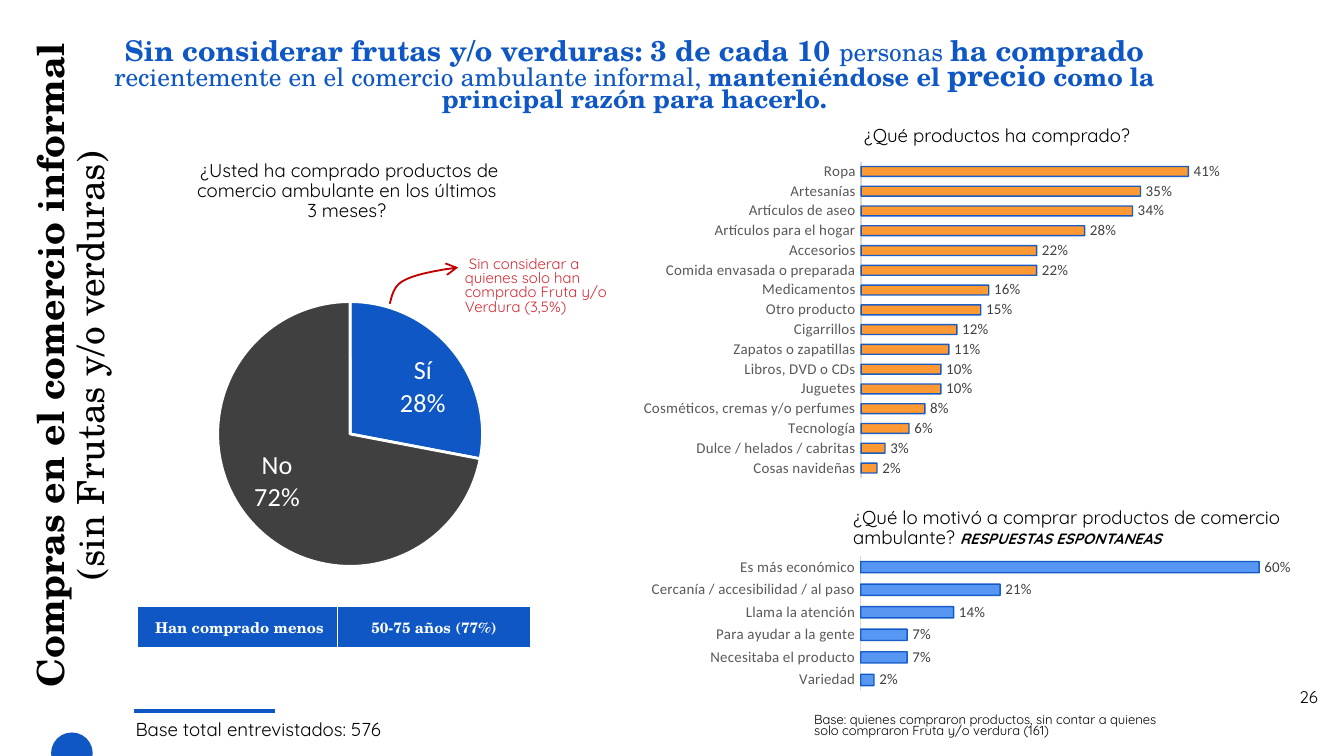
from dataclasses import dataclass

from lxml.etree import SubElement
from pptx import Presentation
from pptx.chart.data import CategoryChartData
from pptx.dml.color import RGBColor
from pptx.enum.chart import XL_CHART_TYPE, XL_LABEL_POSITION, XL_TICK_MARK
from pptx.enum.shapes import MSO_CONNECTOR, MSO_SHAPE
from pptx.enum.text import MSO_ANCHOR, PP_ALIGN
from pptx.oxml import parse_xml
from pptx.oxml.ns import nsdecls, qn
from pptx.util import Inches, Pt


@dataclass(frozen=True)
class Theme:
    blue: str = "0E57C4"
    light_blue: str = "5796F3"
    orange: str = "FF9933"
    dark: str = "404040"
    gray: str = "595959"
    axis: str = "D9D9D9"
    red: str = "D62933"
    arrow: str = "C00000"
    black: str = "000000"
    white: str = "FFFFFF"
    serif: str = "TeX Gyre Schola"
    sans: str = "Quicksand"
    chart: str = "Calibri"
    title: float = 20
    strong: float = 15.3
    key: float = 16.1
    lead: float = 13.6
    pie: float = 14
    body: float = 10
    page: float = 9
    small: float = 8
    note: float = 7


T = Theme()
LEFT, CENTER = PP_ALIGN.LEFT, PP_ALIGN.CENTER
TOP, MIDDLE = MSO_ANCHOR.TOP, MSO_ANCHOR.MIDDLE

# Runs: (text, size, bold, italic)
TITLE = [("Compras en el comercio informal ", T.title, True, False),
         ("(sin Frutas y/o verduras)", T.title, False, False)]
HEADLINE = [
    ("Sin considerar frutas y/o verduras: 3 de cada 10 ", T.strong, True, False),
    ("personas ", T.lead, False, False),
    ("ha comprado ", T.strong, True, False),
    ("recientemente en el comercio ambulante informal,", T.lead, False, False),
    (" manteniéndose el ", T.lead, True, False),
    ("precio", T.key, True, False),
    (" como la principal razón para hacerlo.", T.lead, True, False),
]
REASON_QUESTION = [
    ("¿Qué lo motivó a comprar productos de comercio ambulante? ", T.body, False, False),
    ("RESPUESTAS ESPONTANEAS", T.small, True, True),
]

# Plain texts: (box, text, size, colour, alignment, line spacing)
TEXTS = [
    ((0.91, 5.31, 2.32, 0.27), "Base total entrevistados: 576", T.body, T.black, LEFT, 0.9),
    ((9.57, 5.06, 0.36, 0.35), "26", T.page, T.black, LEFT, 1.0),
    ((6.33, 0.89, 2.93, 0.45), "¿Qué productos ha comprado?", T.body, T.black, LEFT, 0.9),
    ((1.33, 1.15, 2.5, 0.56), " ¿Usted ha comprado productos de comercio ambulante "
     "en los últimos 3 meses?", T.body, T.black, CENTER, 0.9),
    ((5.96, 5.28, 2.81, 0.27), "Base: quienes compraron productos, sin contar a quienes "
     "solo compraron Fruta y/o verdura (161)", T.note, T.black, LEFT, 0.7),
    ((3.36, 1.87, 1.41, 0.56), " Sin considerar a quienes solo han comprado Fruta y/o "
     "Verdura (3,5%)", T.small, T.red, LEFT, 0.8),
]

ANSWERS = [("Sí", 28, T.blue), ("No", 72, T.dark)]
PRODUCTS = [
    ("Ropa", 0.41), ("Artesanías", 0.35), ("Artículos de aseo", 0.34),
    ("Artículos para el hogar", 0.28), ("Accesorios", 0.22),
    ("Comida envasada o preparada", 0.22), ("Medicamentos", 0.16),
    ("Otro producto", 0.15), ("Cigarrillos", 0.12), ("Zapatos o zapatillas", 0.11),
    ("Libros, DVD o CDs", 0.10), ("Juguetes", 0.10),
    ("Cosméticos, cremas y/o perfumes", 0.08), ("Tecnología", 0.06),
    ("Dulce / helados / cabritas", 0.03), ("Cosas navideñas", 0.02),
]
REASONS = [
    ("Es más económico", 0.60), ("Cercanía / accesibilidad / al paso", 0.21),
    ("Llama la atención", 0.14), ("Para ayudar a la gente", 0.07),
    ("Necesitaba el producto", 0.07), ("Variedad", 0.02),
]
PROFILE = [("Han comprado menos", 1.49, PP_ALIGN.RIGHT), ("50-75 años (77%)", 1.44, CENTER)]
ARROW_CURVES = [
    [(2.9, 2.26), (2.92, 2.19), (2.93, 2.12), (3.02, 2.08)],
    [(3.02, 2.08), (3.1, 2.04), (3.26, 2.01), (3.41, 1.99)],
]


def rgb(value):
    return RGBColor.from_string(value)


def box(sizes):
    return [Inches(v) for v in sizes]


def style(font, size, color, name, bold=False, italic=False):
    font.size, font.name, font.bold, font.italic = Pt(size), name, bold, italic
    font.color.rgb = rgb(color)


def stroke(line, color, width):
    line.color.rgb = rgb(color)
    line.width = Pt(width)


def add_text(s, at, runs, color, name, align=LEFT, spacing=1.0, anchor=TOP):
    sp = s.shapes.add_textbox(*box(at))
    tf = sp.text_frame
    tf.word_wrap, tf.vertical_anchor = True, anchor
    p = tf.paragraphs[0]
    p.alignment, p.line_spacing = align, spacing
    for text, size, bold, italic in runs:
        r = p.add_run()
        r.text = text
        style(r.font, size, color, name, bold, italic)
    return sp


def add_chart(s, kind, at, rows, plot_area):
    """Add a one-series chart; plot_area holds the inner plot's x, y, w, h as fractions."""
    data = CategoryChartData(number_format="0%")
    data.categories = [row[0] for row in rows]
    data.add_series("Series 1", [row[1] for row in rows])
    chart = s.shapes.add_chart(kind, *box(at), data).chart
    chart.has_title = chart.has_legend = False
    style(chart.font, T.body, T.black, T.chart)
    area = chart._chartSpace.chart.plotArea
    for old in area.findall(qn("c:layout")):
        area.remove(old)
    parts = [("layoutTarget", "inner"), ("xMode", "edge"), ("yMode", "edge"),
             *zip("xywh", plot_area)]
    inner = "".join(f'<c:{tag} val="{val}"/>' for tag, val in parts)
    area.insert(0, parse_xml(f'<c:layout {nsdecls("c")}><c:manualLayout>{inner}'
                             '</c:manualLayout></c:layout>'))
    plot = chart.plots[0]
    plot.has_data_labels = True
    plot.data_labels.number_format = "0%"
    plot.data_labels.number_format_is_linked = False
    return chart, plot


def add_pie(s, at, rows, plot_area):
    _, plot = add_chart(s, XL_CHART_TYPE.PIE, at, rows, plot_area)
    for i, (_, _, color) in enumerate(rows):
        fmt = plot.series[0].points[i].format
        fmt.fill.solid()
        fmt.fill.fore_color.rgb = rgb(color)
        stroke(fmt.line, T.white, 1.5)
    labels = plot.data_labels
    style(labels.font, T.pie, T.white, T.chart)
    labels.show_value = False
    labels.show_percentage = labels.show_category_name = True
    labels.position = XL_LABEL_POSITION.INSIDE_END


def add_bars(s, at, rows, plot_area, color, maximum):
    chart, plot = add_chart(s, XL_CHART_TYPE.BAR_CLUSTERED, at, rows, plot_area)
    plot.gap_width, plot.vary_by_categories = 100, False
    fmt = plot.series[0].format
    fmt.fill.solid()
    fmt.fill.fore_color.rgb = rgb(color)
    stroke(fmt.line, T.blue, 0.75)
    edge = fmt.line._get_or_add_ln().find(f".//{qn('a:srgbClr')}")
    SubElement(edge, qn("a:alpha"), val="95000")
    plot.data_labels.show_value = True
    plot.data_labels.position = XL_LABEL_POSITION.OUTSIDE_END
    style(plot.data_labels.font, T.small, T.dark, T.chart)
    cat, val = chart.category_axis, chart.value_axis
    cat.reverse_order = True
    cat.major_tick_mark = cat.minor_tick_mark = XL_TICK_MARK.NONE
    style(cat.tick_labels.font, T.small, T.gray, T.chart)
    stroke(cat.format.line, T.axis, 0.75)
    val.minimum_scale, val.maximum_scale = 0, maximum
    val.has_major_gridlines = val.visible = False


def add_profile(s, left, top, height):
    width = sum(w for _, w, _ in PROFILE)
    table = s.shapes.add_table(1, len(PROFILE), *box((left, top, width, height))).table
    for i, (text, w, align) in enumerate(PROFILE):
        table.columns[i].width = Inches(w)
        cell = table.cell(0, i)
        cell.vertical_anchor = MIDDLE
        p = cell.text_frame.paragraphs[0]
        p.alignment = align
        r = p.add_run()
        r.text = text
        style(r.font, T.small, T.white, T.serif, bold=True)
        tc_pr = cell._tc.get_or_add_tcPr()
        for side, pts in zip("LRTB", (1, 1, 1, 3)):
            ln = SubElement(tc_pr, qn(f"a:ln{side}"), w=str(Pt(pts)))
            SubElement(SubElement(ln, qn("a:solidFill")), qn("a:srgbClr"), val=T.white)
        cell.fill.solid()
        cell.fill.fore_color.rgb = rgb(T.blue)


def bezier(points, t):
    weights = ((1 - t) ** 3, 3 * t * (1 - t) ** 2, 3 * t * t * (1 - t), t ** 3)
    return tuple(Inches(sum(w * v for w, v in zip(weights, axis))) for axis in zip(*points))


def add_curved_arrow(s, curves, steps=12):
    builder = s.shapes.build_freeform(*bezier(curves[0], 0))
    builder.add_line_segments([bezier(c, i / steps) for c in curves
                               for i in range(1, steps + 1)], close=False)
    sp = builder.convert_to_shape()
    sp.shadow.inherit = False
    sp.fill.background()
    stroke(sp.line, T.arrow, 1)
    SubElement(sp.line._get_or_add_ln(), qn("a:tailEnd"), type="arrow")


def main():
    prs = Presentation()
    prs.slide_width = Inches(10)
    prs.slide_height = prs.slide_width * 9 // 16
    s = prs.slides.add_slide(prs.slide_layouts[6])

    dot = s.shapes.add_shape(MSO_SHAPE.OVAL, *box((0.38, 5.45, 0.31, 0.31)))
    dot.shadow.inherit = False
    dot.fill.solid()
    dot.fill.fore_color.rgb = rgb(T.blue)
    dot.line.fill.background()
    rule = s.shapes.add_connector(MSO_CONNECTOR.STRAIGHT, *box((1, 5.29, 2.05, 5.29)))
    stroke(rule.line, T.blue, 1.75)
    SubElement(rule._element.spPr, qn("a:effectLst"))

    title = add_text(s, (-2.14, 2.55, 5.36, 0.34), TITLE, T.black, T.serif, CENTER, 0.9, MIDDLE)
    title.rotation = 270
    add_text(s, (0.54, 0.26, 8.36, 0.63), HEADLINE, T.blue, T.serif, CENTER, 0.7, MIDDLE)
    add_pie(s, (1.14, 2.11, 2.93, 2.24), ANSWERS, (0.16, 0.06, 0.68, 0.88))
    add_bars(s, (4.27, 1.13, 5.15, 2.5), PRODUCTS, (0.415, 0.029, 0.519, 0.942), T.orange, 0.45)
    add_bars(s, (4.27, 3.89, 5.69, 1.29), REASONS, (0.375, 0.191, 0.608, 0.781),
             T.light_blue, 0.7)
    add_text(s, (6.25, 3.73, 3.57, 0.41), REASON_QUESTION, T.black, T.sans, spacing=0.9)
    add_profile(s, 1.02, 4.51, 0.32)
    add_curved_arrow(s, ARROW_CURVES)
    for at, text, size, color, align, spacing in TEXTS:
        add_text(s, at, [(text, size, False, False)], color, T.sans, align, spacing)
    prs.save("out.pptx")


if __name__ == "__main__":
    main()
